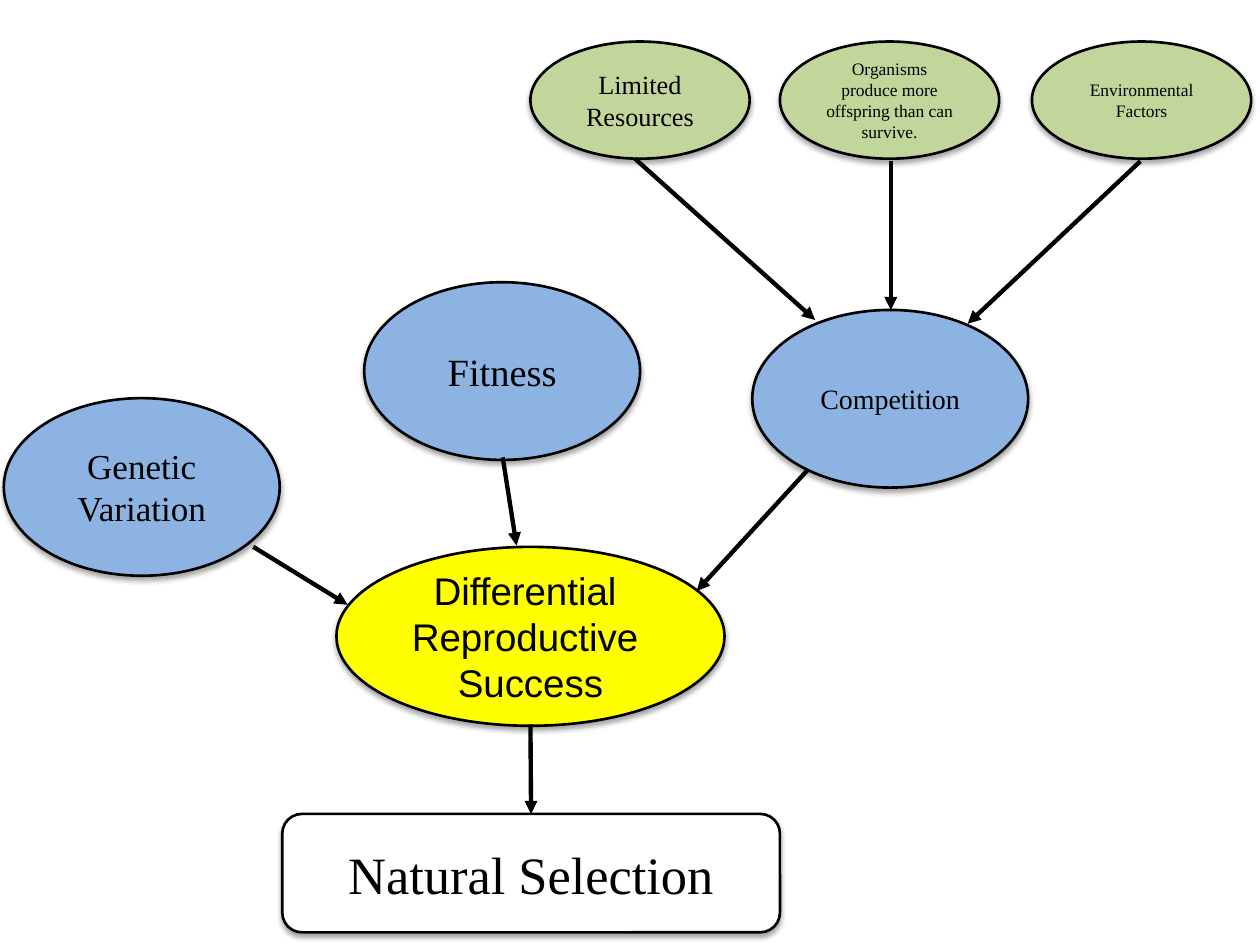
from lxml.etree import SubElement
from pptx import Presentation
from pptx.dml.color import RGBColor
from pptx.enum.shapes import MSO_CONNECTOR, MSO_SHAPE
from pptx.enum.text import MSO_ANCHOR, PP_ALIGN
from pptx.oxml.ns import qn
from pptx.util import Inches, Pt

BLACK, BLUE, GREEN, YELLOW, WHITE = "000000", "8DB3E2", "C2D69B", "FFFF00", "FFFFFF"
SERIF, SANS = "Times New Roman", "Arial"

FACTOR_SIZE = (2.19, 1.41)
CAUSE_SIZE = (1.74, 0.93)
CAUSE_TOP = 0.33

FACTORS = [
    (0.03, 3.16, ["Genetic", "Variation"], 20),
    (2.89, 2.24, ["Fitness"], 22),
    (5.97, 2.46, ["Competition"], 16),
]
CAUSES = [
    (4.21, ["Limited", "Resources"], 15),
    (6.19, ["Organisms produce more offspring than can survive."], 10),
    (8.19, ["Environmental Factors"], 10),
]
SUCCESS = ["Differential ", "Reproductive ", "Success"]
ARROWS = [
    ((5.04, 1.26), (6.47, 2.54)),
    ((7.07, 1.28), (7.07, 2.46)),
    ((9.05, 1.28), (7.68, 2.57)),
    ((6.41, 3.73), (5.53, 4.69)),
    ((3.99, 3.63), (4.1, 4.33)),
    ((2.01, 4.34), (2.76, 4.8)),
]
RESULT_ARROW = ((4.21, 5.75), (4.21, 6.46))


def color(value):
    return RGBColor.from_string(value)


def write_text(frame, lines, size, font=SERIF):
    frame.word_wrap = True
    frame.vertical_anchor = MSO_ANCHOR.MIDDLE
    frame.margin_left = frame.margin_right = Inches(0.1)
    frame.margin_top = frame.margin_bottom = Inches(0.1)
    for index, line in enumerate(lines):
        para = frame.add_paragraph() if index else frame.paragraphs[0]
        para.alignment = PP_ALIGN.CENTER
        span = para.add_run()
        span.text = line
        span.font.size = Pt(size)
        span.font.name = font
        span.font.color.rgb = color(BLACK)


def add_shadow(shape):
    shape.shadow.inherit = False
    effects = shape._element.spPr.find(qn("a:effectLst"))
    shadow = SubElement(effects, qn("a:outerShdw"), blurRad=str(Pt(3)), dist=str(Pt(2)),
                        dir="5400000", rotWithShape="0")
    tint = SubElement(shadow, qn("a:srgbClr"), val=BLACK)
    SubElement(tint, qn("a:alpha"), val="35000")


def add_node(page, place, lines, fill, size, font=SERIF, kind=MSO_SHAPE.OVAL):
    node = page.shapes.add_shape(kind, *map(Inches, place))
    node.fill.solid()
    node.fill.fore_color.rgb = color(fill)
    node.line.color.rgb = color(BLACK)
    node.line.width = Pt(1.5)
    add_shadow(node)
    write_text(node.text_frame, lines, size, font=font)
    return node


def add_arrow(page, start, end):
    arrow = page.shapes.add_connector(MSO_CONNECTOR.STRAIGHT, *map(Inches, start + end))
    arrow.line.color.rgb = color(BLACK)
    arrow.line.width = Pt(2.5)
    SubElement(arrow.line._get_or_add_ln(), qn("a:tailEnd"), type="triangle")
    SubElement(arrow._element.spPr, qn("a:effectLst"))
    return arrow


def main():
    deck = Presentation()
    deck.slide_width, deck.slide_height = Inches(10), Inches(7.5)
    page = deck.slides.add_slide(deck.slide_layouts[6])

    for left, top, lines, size in FACTORS:
        add_node(page, (left, top, *FACTOR_SIZE), lines, BLUE, size)
    for left, lines, size in CAUSES:
        add_node(page, (left, CAUSE_TOP, *CAUSE_SIZE), lines, GREEN, size)
    add_node(page, (2.67, 4.34, 3.08, 1.42), SUCCESS, YELLOW, 22, font=SANS)
    result = add_node(page, (2.24, 6.46, 3.95, 0.94), ["Natural Selection"], WHITE, 30,
                      kind=MSO_SHAPE.ROUNDED_RECTANGLE)

    for start, end in ARROWS:
        add_arrow(page, start, end)
    add_arrow(page, *RESULT_ARROW).end_connect(result, 0)

    deck.save("out.pptx")


if __name__ == "__main__":
    main()
